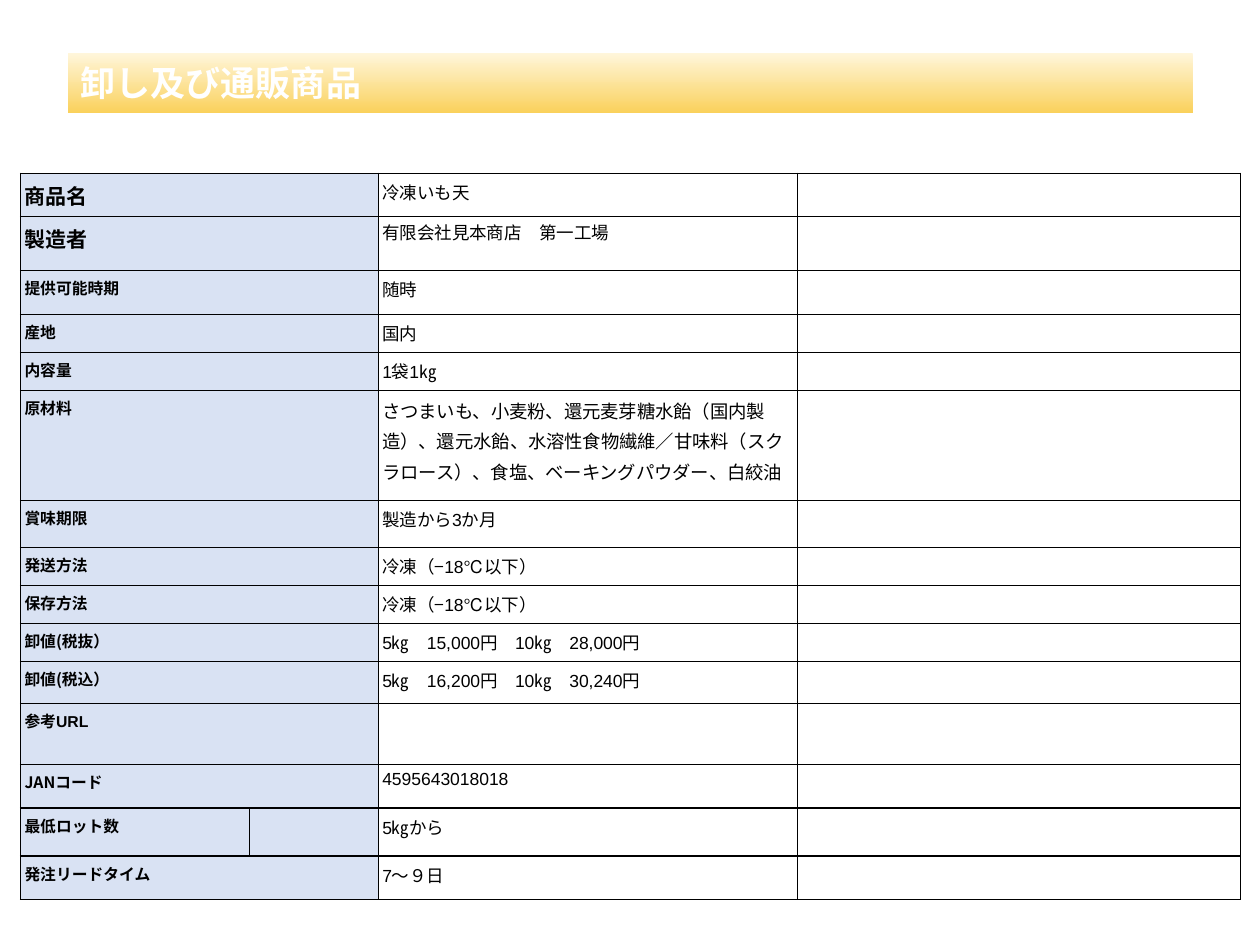
"""Build a product sheet slide: a gradient title bar over a bordered table."""
from lxml import etree
from pptx import Presentation
from pptx.dml.color import RGBColor
from pptx.enum import text as t
from pptx.oxml import ns
from pptx.util import Pt

COLORS = {"label": "D9E2F3", "ink": "000000", "white": "FFFFFF",
          "bar_top": "FFF6DB", "bar_bottom": "FAD15C"}
LATIN, CJK = "Arial", "Noto Sans CJK JP"
TITLE = "卸し及び通販商品"
COLUMNS = [131, 73.5, 239.5, 253]
ROWS = [
    ("商品名", "冷凍いも天", 24.7),
    ("製造者", "有限会社見本商店　第一工場", 30.9),
    ("提供可能時期", "随時", 25.2),
    ("産地", "国内", 21.7),
    ("内容量", "1袋1㎏", 21.7),
    ("原材料", "さつまいも、小麦粉、還元麦芽糖水飴（国内製造）、還元水飴、水溶性食物繊維／"
     "甘味料（スクラロース）、食塩、ベーキングパウダー、白絞油", 62.9),
    ("賞味期限", "製造から3か月", 26.8),
    ("発送方法", "冷凍（−18℃以下）", 21.7),
    ("保存方法", "冷凍（−18℃以下）", 21.7),
    ("卸値(税抜）", "5㎏　15,000円　10㎏　28,000円", 21.7),
    ("卸値(税込）", "5㎏　16,200円　10㎏　30,240円", 24),
    ("参考URL", "", 34.9),
    ("JANコード", "4595643018018", 25.1),
    ("最低ロット数", "5㎏から", 27.4),
    ("発注リードタイム", "7～９日", 25.1),
]
LARGE_LABELS = {"商品名", "製造者"}
SPLIT_LABEL = "最低ロット数"


def rgb(name):
    return RGBColor.from_string(COLORS[name])


def write(frame, content, size=10, font=LATIN, color="ink", bold=False, spacing=1.15):
    """Fill the first paragraph of a text frame, keeping its size when empty."""
    paragraph = frame.paragraphs[0]
    paragraph.alignment = t.PP_ALIGN.LEFT
    paragraph.line_spacing = spacing
    if not content:
        etree.SubElement(paragraph._p, ns.qn("a:endParaRPr"), sz=str(size * 100))
        return
    run = paragraph.add_run()
    run.text = content
    run.font.size, run.font.bold, run.font.name = Pt(size), bold, font
    run.font.color.rgb = rgb(color)
    latin = run.font._element.find(ns.qn("a:latin"))
    latin.addnext(etree.Element(ns.qn("a:ea"), typeface=CJK))


def format_cell(cell, fill=None):
    """Set the margins, fill and four thin borders of a cell."""
    cell.margin_left = cell.margin_right = Pt(2.3)
    cell.margin_top = cell.margin_bottom = Pt(1.5)
    if fill:
        cell.fill.solid()
        cell.fill.fore_color.rgb = rgb(fill)
    else:
        cell.fill.background()
    properties = cell._tc.get_or_add_tcPr()
    for index, side in enumerate(("lnL", "lnR", "lnT", "lnB")):
        line = etree.Element(ns.qn(f"a:{side}"), w=str(Pt(0.75)))
        solid = etree.SubElement(line, ns.qn("a:solidFill"))
        etree.SubElement(solid, ns.qn("a:srgbClr"), val=COLORS["ink"])
        properties.insert(index, line)


def add_title(slide):
    title = slide.shapes.title
    title.left, title.top, title.width, title.height = Pt(38.9), Pt(30.3), Pt(642.7), Pt(34.2)
    title.fill.gradient()
    title.fill.gradient_angle = 270
    for stop, name, position in zip(title.fill.gradient_stops, ("bar_top", "bar_bottom"), (0, 1)):
        stop.color.rgb, stop.position = rgb(name), position
    frame = title.text_frame
    frame.auto_size = t.MSO_AUTO_SIZE.NONE
    frame.vertical_anchor = t.MSO_ANCHOR.MIDDLE
    write(frame, TITLE, size=20, color="white", bold=True, spacing=1.0)


def add_product_table(slide):
    heights = [height for _, _, height in ROWS]
    table = slide.shapes.add_table(len(ROWS), len(COLUMNS), Pt(11.7), Pt(98.9),
                                   Pt(sum(COLUMNS)), Pt(sum(heights))).table
    table.first_row = table.horz_banding = False
    for column, width in zip(table.columns, COLUMNS):
        column.width = Pt(width)
    for index, (label, value, height) in enumerate(ROWS):
        table.rows[index].height = Pt(height)
        cells = list(table.rows[index].cells)
        for cell, fill in zip(cells, ("label", "label", None, None)):
            format_cell(cell, fill)
        if label != SPLIT_LABEL:
            cells[0].merge(cells[1])
        write(cells[0].text_frame, label, size=12 if label in LARGE_LABELS else 9,
              font=LATIN if "URL" in label else CJK, bold=True)
        write(cells[1].text_frame, "")
        write(cells[2].text_frame, value, size=10.5 if label == "原材料" else 10,
              spacing=1.0 if label == "製造者" else 1.15)
        write(cells[3].text_frame, "")


def main():
    presentation = Presentation()
    presentation.slide_width, presentation.slide_height = Pt(720), Pt(540)
    slide = presentation.slides.add_slide(presentation.slide_layouts[5])
    add_title(slide)
    add_product_table(slide)
    presentation.save("out.pptx")


if __name__ == "__main__":
    main()
